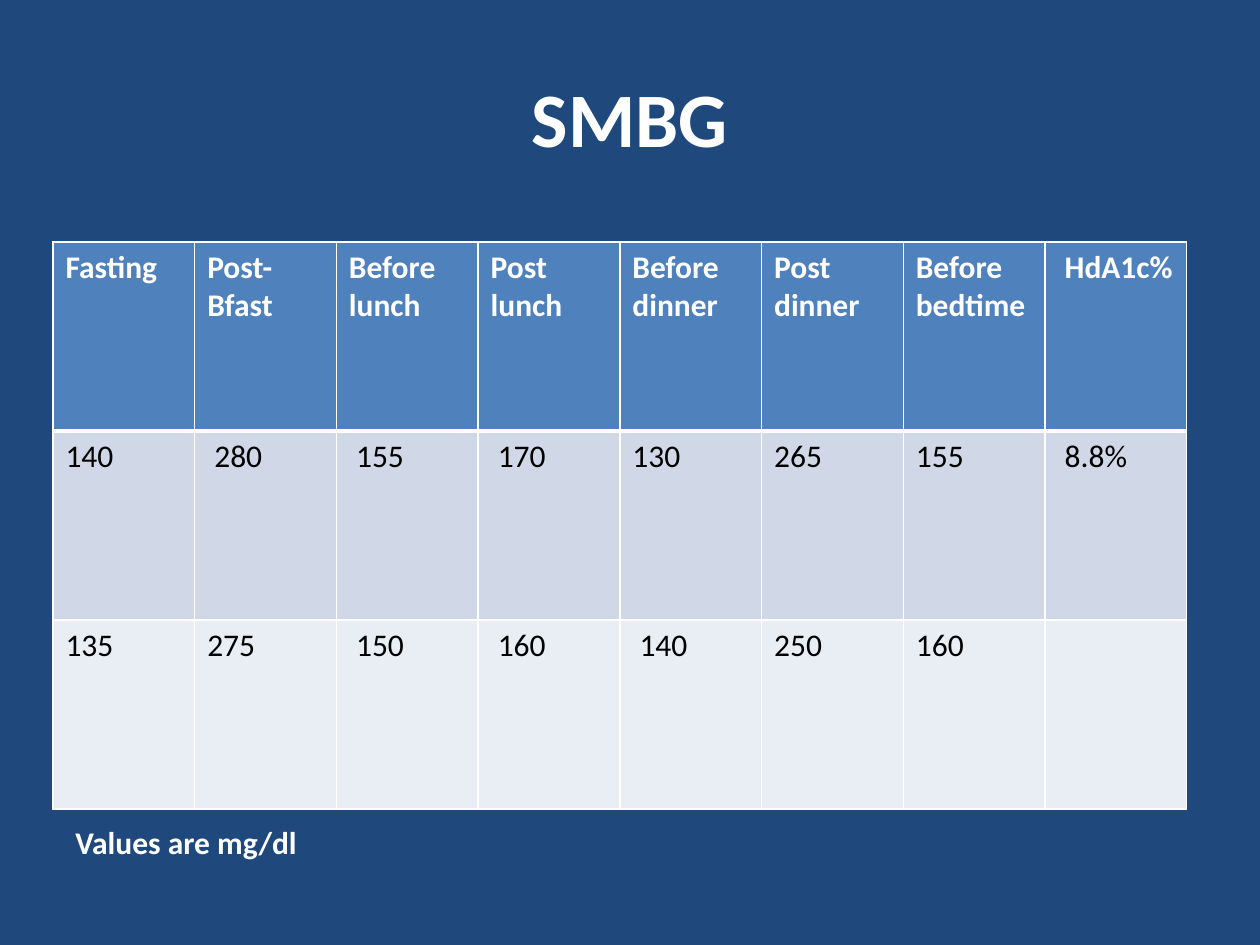
from pptx import Presentation
from pptx.dml.color import RGBColor
from pptx.enum.text import MSO_ANCHOR as Anchor, PP_ALIGN as Align
from pptx.oxml import parse_xml
from pptx.oxml.ns import nsdecls
from pptx.util import Inches, Pt

WHITE = "FFFFFF"


def add_run(frame, text, size, color, bold):
    run = frame.paragraphs[0].add_run()
    run.text = text
    font = run.font
    font.name, font.size, font.bold = "Calibri", Pt(size), bold
    font.color.rgb = RGBColor.from_string(color)


def set_edges(cell, top, bottom):
    """Draw white cell borders; top and bottom are widths in points."""
    props = cell._tc.get_or_add_tcPr()
    widths = {"L": 1, "R": 1, "T": top, "B": bottom}
    for i, (side, width) in enumerate(widths.items()):
        props.insert(i, parse_xml(
            f'<a:ln{side} {nsdecls("a")} w="{Pt(width)}"><a:solidFill>'
            f'<a:srgbClr val="{WHITE}"/></a:solidFill></a:ln{side}>'))


prs = Presentation()
prs.slide_width, prs.slide_height = Inches(10), Inches(7.5)
slide = prs.slides.add_slide(prs.slide_layouts[6])
back = slide.background.fill
back.solid()
back.fore_color.rgb = RGBColor.from_string("1F497D")

# Title
box = slide.shapes.add_textbox(Inches(0.5), Inches(0.3), Inches(9), Inches(1.25))
title = box.text_frame
title.word_wrap = True
title.vertical_anchor = Anchor.MIDDLE
title.paragraphs[0].alignment = Align.CENTER
add_run(title, "SMBG", 44, WHITE, True)

# Glucose readings
rows = [
    ["Fasting", "Post-Bfast", "Before lunch", "Post lunch",
     "Before dinner", "Post dinner", "Before bedtime", " HdA1c%"],
    ["140", " 280", " 155", " 170", "130", "265", "155", " 8.8%"],
    ["135", "275", " 150", " 160", " 140", "250", "160", ""],
]
fills = ["4F81BD", "D0D8E8", "E9EDF4"]
edges = [(1, 3), (3, 1), (1, 1)]
table = slide.shapes.add_table(
    len(rows), len(rows[0]),
    Inches(0.42), Inches(1.92), Inches(9), Inches(4.5)).table
for r, (row, fill, edge) in enumerate(zip(rows, fills, edges)):
    head = r == 0
    for c, text in enumerate(row):
        cell = table.cell(r, c)
        cell.fill.solid()
        cell.fill.fore_color.rgb = RGBColor.from_string(fill)
        set_edges(cell, *edge)
        if text:
            add_run(cell.text_frame, text, 18, WHITE if head else "000000", head)

# Unit note
box = slide.shapes.add_textbox(Inches(0.5), Inches(6.48), Inches(1.97), Inches(0.4))
note = box.text_frame
note.word_wrap = False
add_run(note, "Values are mg/dl", 18, WHITE, True)

prs.save("out.pptx")
